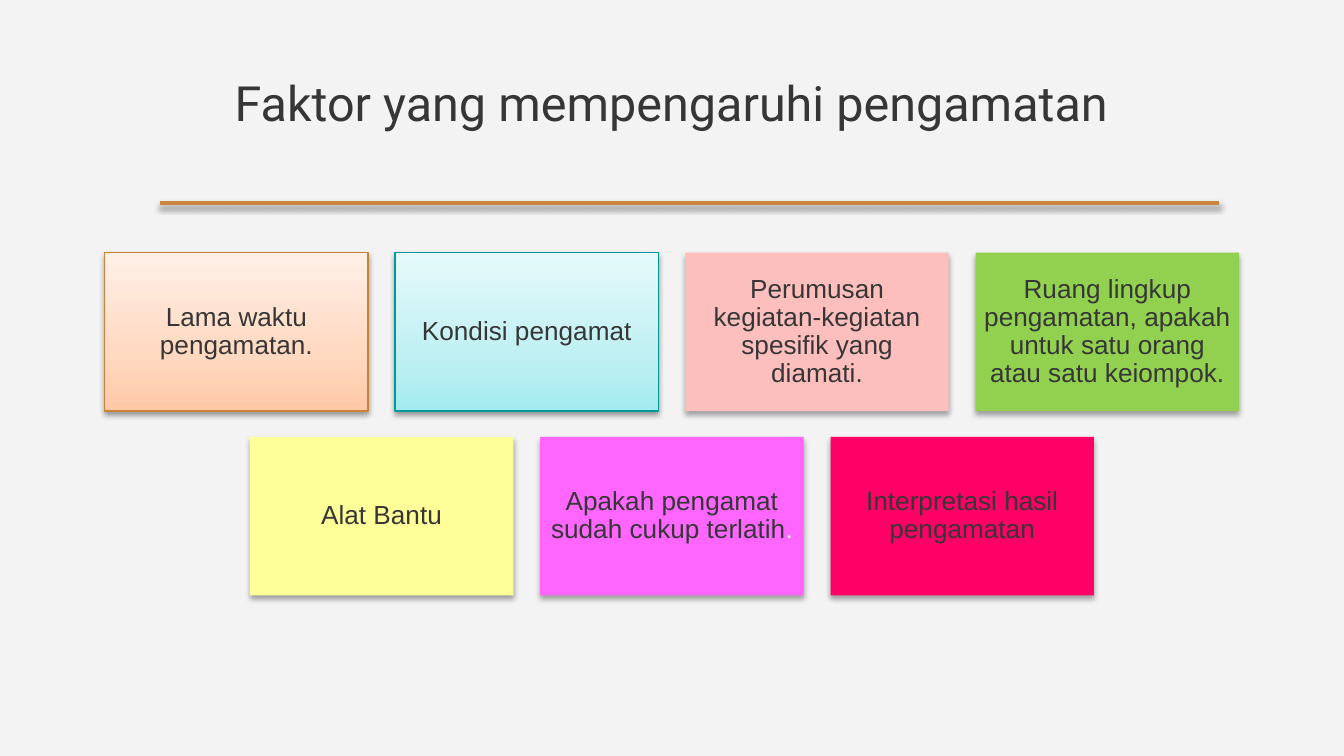
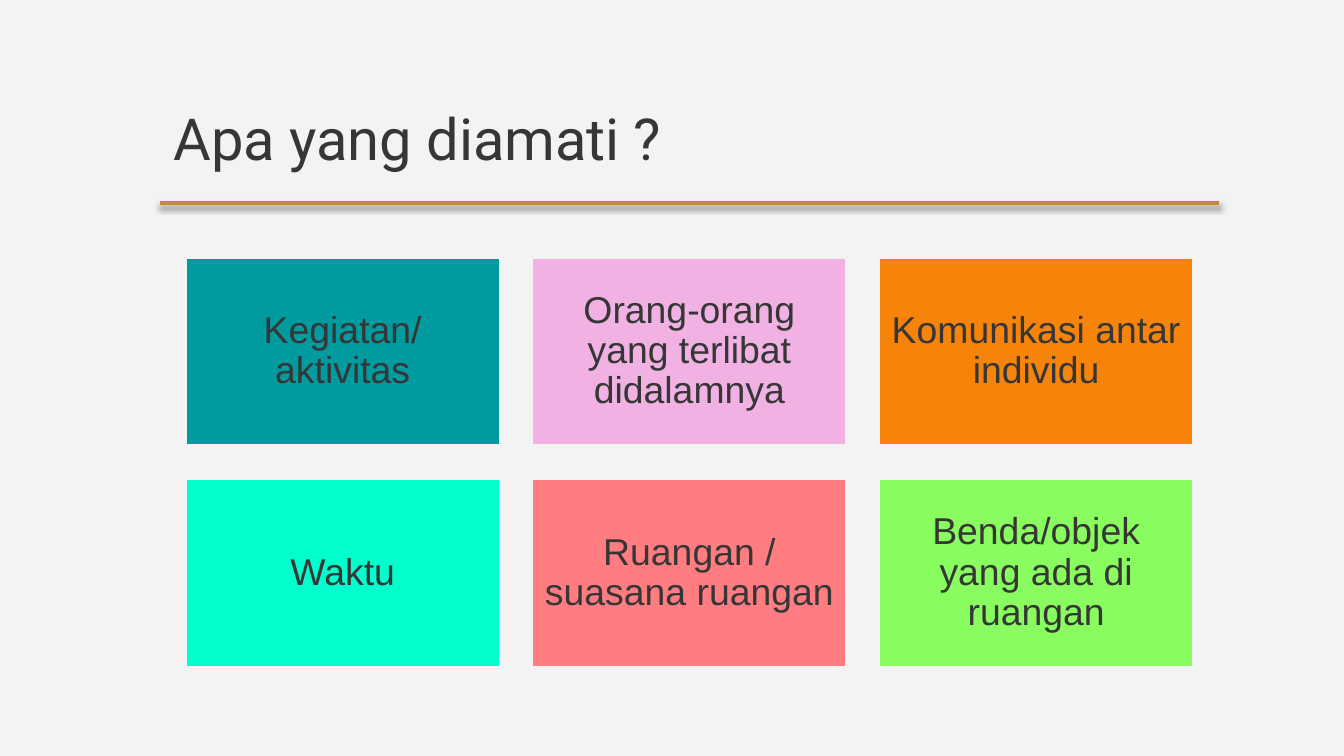
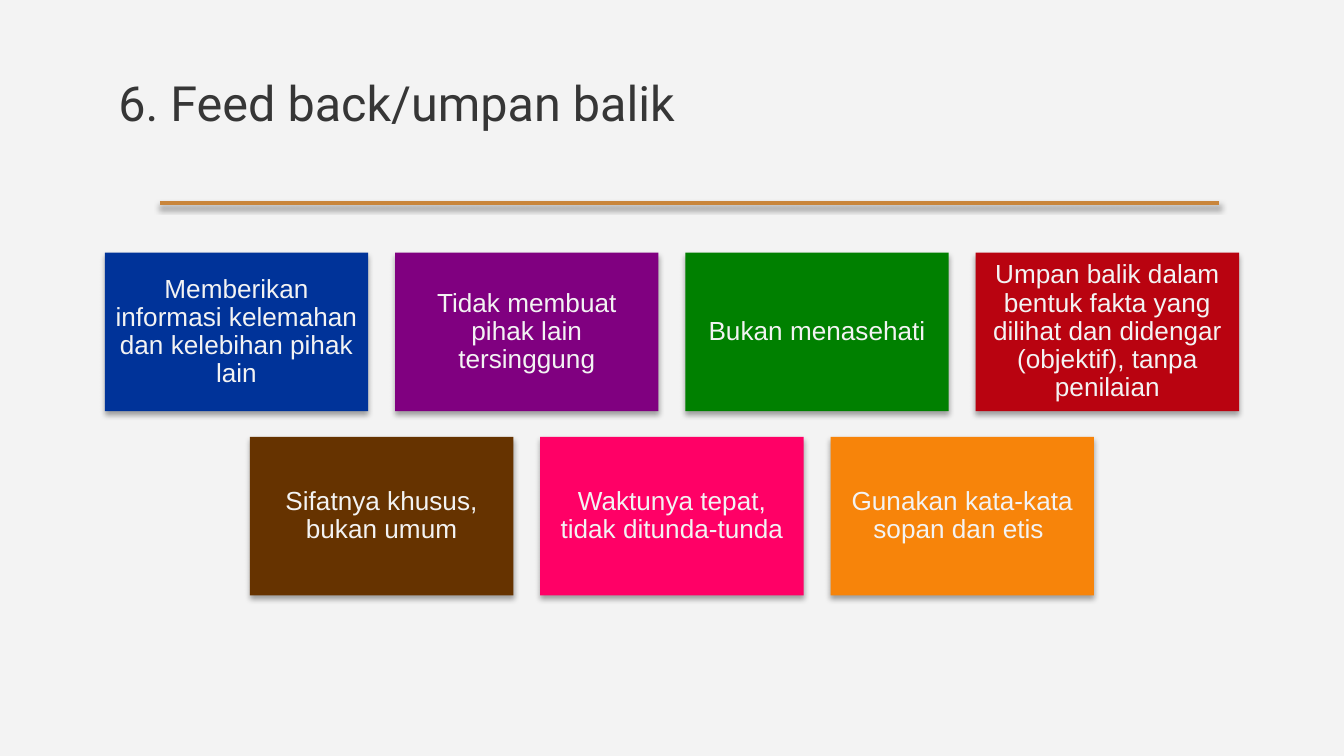
"""Build three slides of coloured cards under a shared title rule."""
from copy import deepcopy
from dataclasses import dataclass

from lxml.etree import SubElement
from pptx import Presentation
from pptx.dml.color import RGBColor
from pptx.enum.shapes import MSO_CONNECTOR, MSO_SHAPE
from pptx.enum.text import MSO_ANCHOR, MSO_AUTO_SIZE, PP_ALIGN
from pptx.oxml.ns import qn
from pptx.util import Inches, Pt


@dataclass(frozen=True)
class Theme:
    paper: str = "F3F3F3"
    ink: str = "363636"
    rule: str = "C9863C"
    title_font: str = "Roboto"
    card_font: str = "Arial"
    title_size: int = 26
    large_title_size: int = 31
    card_size: int = 14
    large_card_size: int = 20


THEME = Theme()

PEACH = {"stops": [(0, "FFC8A7"), (0.35, "FFD8C0"), (1, "FFF0E7")], "edge": "C88337"}
AQUA = {"stops": [(0, "A3EBEF"), (0.35, "C0F0F3"), (1, "E6FAFB")], "edge": "00989B"}

TITLE_TOP = {"box": (0.78, 0.49, 8.44, 0.63), "size": THEME.title_size, "spacing": 0.9}
TITLE_LOW = {"box": (1.19, 0.66, 7.88, 0.86), "size": THEME.large_title_size, "spacing": 1.0}

SMALL_CARDS = {"centre": 5.0, "top": 1.88, "card": (1.96, 1.18), "gaps": (0.2, 0.19),
               "inset": 0.06, "size": THEME.card_size, "outlined": False}
LARGE_CARDS = {"centre": 5.13, "top": 1.91, "card": (2.35, 1.41), "gaps": (0.23, 0.24),
               "inset": 0.09, "size": THEME.large_card_size, "outlined": True}

SLIDES = [
    {
        "title": "Faktor yang mempengaruhi pengamatan",
        "title_style": TITLE_TOP,
        "align": PP_ALIGN.CENTER,
        "grid": SMALL_CARDS,
        "colour": THEME.ink,
        "rows": [
            [("Lama waktu pengamatan.", PEACH),
             ("Kondisi pengamat", AQUA),
             ("Perumusan kegiatan-kegiatan spesifik yang diamati.", "FDBFBD"),
             ("Ruang lingkup pengamatan, apakah untuk satu orang atau satu keiompok.", "92D050")],
            [("Alat Bantu", "FFFF99"),
             ("Apakah pengamat sudah cukup terlatih", "FF66FF", "."),
             ("Interpretasi hasil pengamatan", "FF0066")],
        ],
    },
    {
        "title": "Apa yang diamati ?",
        "title_style": TITLE_LOW,
        "align": PP_ALIGN.LEFT,
        "grid": LARGE_CARDS,
        "colour": THEME.ink,
        "rows": [
            [("Kegiatan/aktivitas", "009B9F"),
             ("Orang-orang yang terlibat didalamnya", "F1B1E3"),
             ("Komunikasi antar individu", "F7840A")],
            [("Waktu", "00FFCC"),
             ("Ruangan / suasana ruangan ", "FF7C80"),
             ("Benda/objek yang ada di ruangan", "89FC60")],
        ],
    },
    {
        "title": "6. Feed back/umpan balik",
        "title_style": TITLE_TOP,
        "align": PP_ALIGN.LEFT,
        "grid": SMALL_CARDS,
        "colour": THEME.paper,
        "rows": [
            [("Memberikan informasi kelemahan dan kelebihan pihak lain", "003399"),
             ("Tidak membuat pihak lain tersinggung", "800080"),
             ("Bukan menasehati", "008000"),
             ("Umpan balik dalam bentuk fakta yang dilihat dan didengar (objektif), tanpa penilaian",
              "B90310")],
            [("Sifatnya khusus, bukan umum", "663300"),
             ("Waktunya tepat, tidak ditunda-tunda", "FF0066"),
             ("Gunakan kata-kata sopan dan etis ", "F7840A")],
        ],
    },
]


def rgb(colour):
    return RGBColor.from_string(colour)


def write(para, text, *, font, size, colour):
    span = para.add_run()
    span.text = text
    span.font.name = font
    span.font.size = Pt(size)
    span.font.color.rgb = rgb(colour)


def prepare_frame(frame, *, inset, anchor):
    frame.word_wrap = True
    frame.auto_size = MSO_AUTO_SIZE.NONE
    frame.vertical_anchor = anchor
    frame.margin_left = frame.margin_right = Inches(inset)
    frame.margin_top = frame.margin_bottom = Inches(inset)
    return frame.paragraphs[0]


def add_shadow(shape, *, opacity=35, distance=1.8):
    properties = shape._element.spPr
    effects = properties.find(qn("a:effectLst"))
    if effects is None:
        effects = SubElement(properties, qn("a:effectLst"))
    shadow = SubElement(effects, qn("a:outerShdw"), blurRad=str(Pt(3.1)),
                        dist=str(Pt(distance)), dir="5400000", rotWithShape="0")
    black = SubElement(shadow, qn("a:srgbClr"), val="000000")
    SubElement(black, qn("a:alpha"), val=str(opacity * 1000))


def fill_gradient(box, stops):
    box.fill.gradient()
    box.fill.gradient_angle = 90
    stop_list = box._element.spPr.find(".//" + qn("a:gsLst"))
    stop_list.insert(1, deepcopy(stop_list[0]))
    for stop, (position, colour) in zip(box.fill.gradient_stops, stops):
        stop.position = position
        stop.color.rgb = rgb(colour)


def set_outline(shape, colour, width):
    shape.line.color.rgb = rgb(colour)
    shape.line.width = Pt(width)


def add_rule(page):
    rule = page.shapes.add_connector(
        MSO_CONNECTOR.STRAIGHT, Inches(1.19), Inches(1.51), Inches(9.07), Inches(1.51))
    set_outline(rule, THEME.rule, 2.5)
    add_shadow(rule)


def add_title(page, text, style, align):
    title = page.shapes.title
    title.left, title.top, title.width, title.height = map(Inches, style["box"])
    para = prepare_frame(title.text_frame, inset=0.1, anchor=MSO_ANCHOR.TOP)
    para.alignment = align
    para.line_spacing = style["spacing"]
    write(para, text, font=THEME.title_font, size=style["size"], colour=THEME.ink)


def style_card(box, paint, outlined):
    box.shadow.inherit = False
    if isinstance(paint, dict):
        fill_gradient(box, paint["stops"])
        set_outline(box, paint["edge"], 0.75)
        add_shadow(box, opacity=38, distance=1.6)
        return
    box.fill.solid()
    box.fill.fore_color.rgb = rgb(paint)
    if outlined:
        set_outline(box, THEME.paper, 2)
    else:
        box.line.fill.background()
        add_shadow(box)


def add_card(page, place, card, grid, colour):
    text, paint, *tails = card
    box = page.shapes.add_shape(MSO_SHAPE.RECTANGLE, *map(Inches, place))
    style_card(box, paint, grid["outlined"])
    para = prepare_frame(box.text_frame, inset=grid["inset"], anchor=MSO_ANCHOR.MIDDLE)
    para.alignment = PP_ALIGN.CENTER
    para.line_spacing = 0.9
    space_after = SubElement(para._p.get_or_add_pPr(), qn("a:spcAft"))
    SubElement(space_after, qn("a:spcPct"), val="35000")
    write(para, text, font=THEME.card_font, size=grid["size"], colour=colour)
    for tail in tails:
        write(para, tail, font=THEME.card_font, size=grid["size"], colour=THEME.paper)


def add_cards(page, rows, grid, colour):
    width, height = grid["card"]
    column_gap, row_gap = grid["gaps"]
    for row_index, row in enumerate(rows):
        row_width = len(row) * (width + column_gap) - column_gap
        left = grid["centre"] - row_width / 2
        top = grid["top"] + row_index * (height + row_gap)
        for column, card in enumerate(row):
            place = (left + column * (width + column_gap), top, width, height)
            add_card(page, place, card, grid, colour)


def main():
    deck = Presentation()
    deck.slide_width = Inches(10)
    deck.slide_height = deck.slide_width * 9 // 16
    background = deck.slide_master.background.fill
    background.solid()
    background.fore_color.rgb = rgb(THEME.paper)
    for content in SLIDES:
        page = deck.slides.add_slide(deck.slide_layouts[5])
        add_rule(page)
        add_title(page, content["title"], content["title_style"], content["align"])
        add_cards(page, content["rows"], content["grid"], content["colour"])
    deck.save("out.pptx")


if __name__ == "__main__":
    main()
